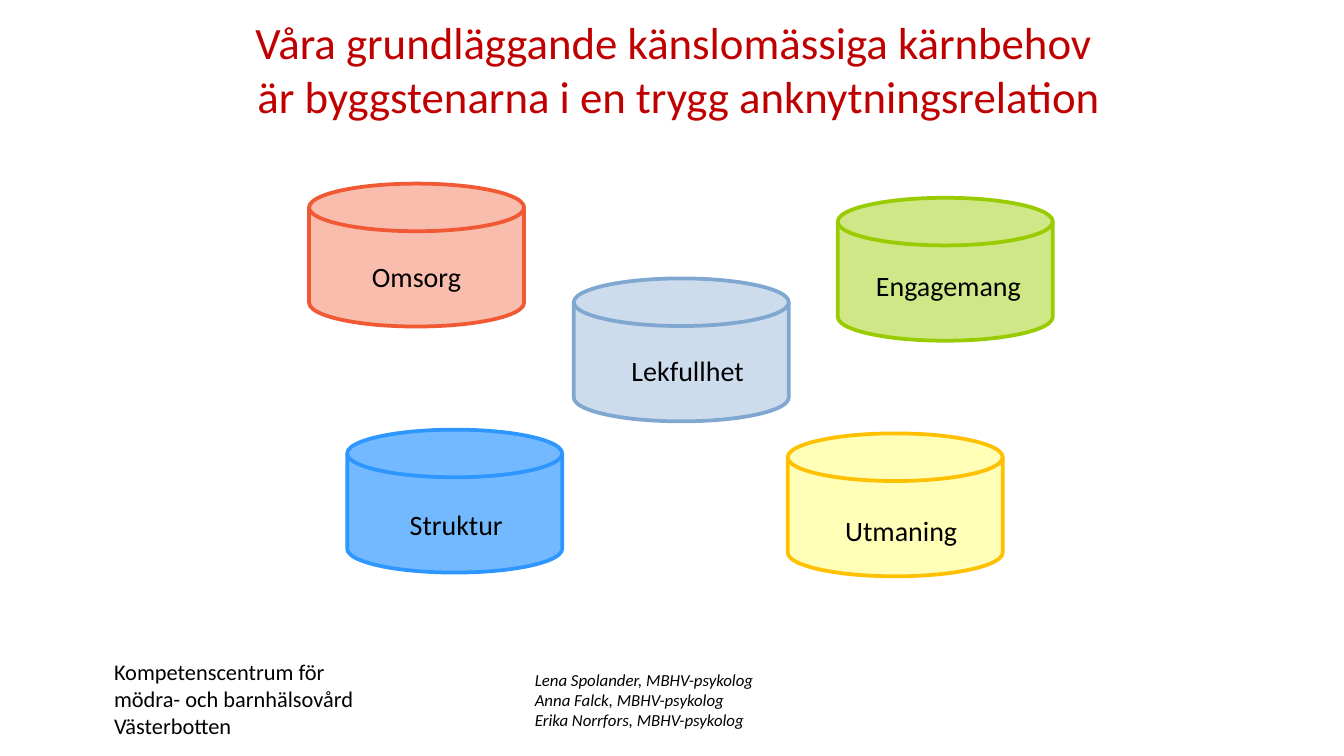
from dataclasses import dataclass

from lxml import etree
from pptx import Presentation
from pptx.dml.color import RGBColor
from pptx.enum.shapes import MSO_SHAPE
from pptx.enum.text import PP_ALIGN
from pptx.oxml.ns import qn
from pptx.util import Pt

DISK = MSO_SHAPE.FLOWCHART_MAGNETIC_DISK
CENTER, LEFT = PP_ALIGN.CENTER, PP_ALIGN.LEFT
FONT = "Calibri"
BLACK, RED = "000000", "C00000"
DISK_W, DISK_H = 115.2, 76.6


@dataclass
class TextBlock:
    x: float
    y: float
    w: float
    h: float
    lines: list[str]
    size: float
    color: str = BLACK
    italic: bool = False
    align: PP_ALIGN = LEFT


@dataclass
class Need:
    x: float
    y: float
    fill: str
    line: str
    label: TextBlock
    opacity: int = 100


NEEDS = [
    Need(165.6, 98.4, "F9BDAD", "F05933",
         TextBlock(192.2, 135.4, 80, 28.8, ["Omsorg"], 15)),
    Need(307.4, 149.2, "CCDCEC", "80A7D0",
         TextBlock(331.2, 185.8, 79.2, 27.4, ["Lekfullhet"], 15)),
    Need(448.8, 106, "99CC00", "99CC00",
         TextBlock(462.2, 140.4, 114.5, 30.2, ["Engagemang"], 15), 47),
    Need(186, 230.2, "73B9FF", "2D96FF",
         TextBlock(212.4, 268.6, 86.4, 28.8, ["Struktur"], 15)),
    Need(422, 232.2, "FFFF66", "FFC000",
         TextBlock(445.7, 271.4, 79.2, 28, ["Utmaning"], 15), 47),
]

TEXTS = [
    TextBlock(279.4, 355, 167, 40.3,
              ["Lena Spolander, MBHV-psykolog", "Anna Falck, MBHV-psykolog",
               "Erika Norrfors, MBHV-psykolog"], 9, italic=True),
    TextBlock(54, 349.2, 147.6, 51.1,
              ["Kompetenscentrum för mödra- och barnhälsovård", "Västerbotten"], 12),
    TextBlock(87.8, 4.3, 551.5, 65.5,
              ["Våra grundläggande känslomässiga kärnbehov ",
               "är byggstenarna i en trygg anknytningsrelation"], 24, RED, align=CENTER),
]


def rgb(color: str) -> RGBColor:
    return RGBColor.from_string(color)


def add_text(slide, block: TextBlock) -> None:
    sp = slide.shapes.add_textbox(Pt(block.x), Pt(block.y), Pt(block.w), Pt(block.h))
    tf = sp.text_frame
    tf.word_wrap = True
    tf.text = "\n".join(block.lines)
    for p in tf.paragraphs:
        p.alignment = block.align
        for r in p.runs:
            r.font.name = FONT
            r.font.size = Pt(block.size)
            r.font.italic = block.italic
            r.font.color.rgb = rgb(block.color)


def add_need(slide, need: Need) -> None:
    """Draw one cylinder with its label on top."""
    sp = slide.shapes.add_shape(DISK, Pt(need.x), Pt(need.y), Pt(DISK_W), Pt(DISK_H))
    sp.shadow.inherit = False
    sp.fill.solid()
    sp.fill.fore_color.rgb = rgb(need.fill)
    sp.line.color.rgb = rgb(need.line)
    sp.line.width = Pt(2)
    if need.opacity < 100:
        clr = sp.element.spPr.find(qn("a:solidFill")).find(qn("a:srgbClr"))
        etree.SubElement(clr, qn("a:alpha"), val=str(need.opacity * 1000))
    add_text(slide, need.label)


def main() -> None:
    prs = Presentation()
    prs.slide_width, prs.slide_height = Pt(720), Pt(405)
    slide = prs.slides.add_slide(prs.slide_layouts[6])
    for need in NEEDS:
        add_need(slide, need)
    for block in TEXTS:
        add_text(slide, block)
    prs.save("out.pptx")


if __name__ == "__main__":
    main()
